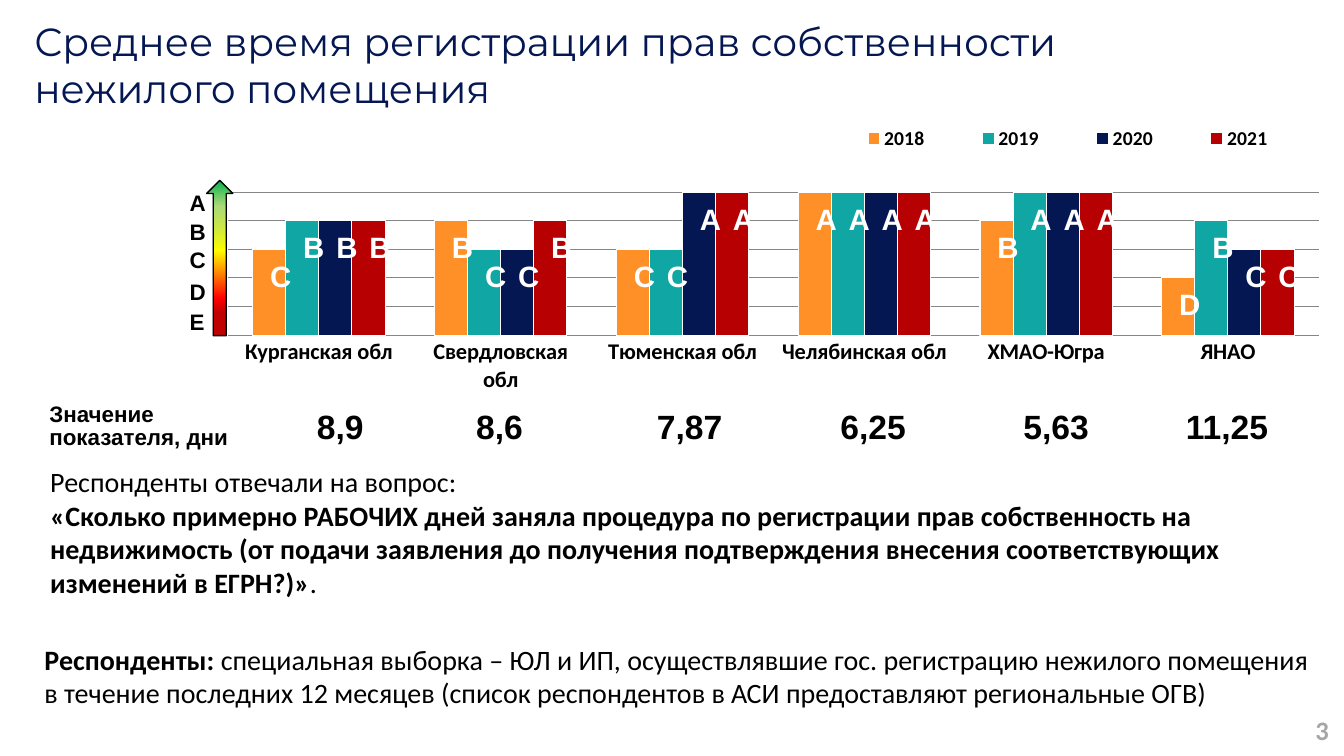
from dataclasses import dataclass

from lxml import etree
from pptx import Presentation
from pptx import util as u
from pptx.chart import data as chart_data
from pptx.dml.color import RGBColor
from pptx.enum import chart as charts, shapes, text
from pptx.oxml import parse_xml
from pptx.oxml.ns import qn

DRAWING_NS = "http://schemas.openxmlformats.org/drawingml/2006/main"


@dataclass(frozen=True)
class Theme:
    navy: str = "041752"
    black: str = "000000"
    white: str = "FFFFFF"
    muted: str = "A6A6A6"
    grid: str = "868686"
    series: tuple = ("FF9028", "10A6A4", "041752", "B70002")
    # position, colour, opacity (percent), from best grade to worst
    scale: tuple = ((0, "00B050", 100), (17, "92D050", 76), (45, "FFFF00", 100),
                    (76, "FF0000", 100), (85, "C00000", 100))
    heading_font: str = "Montserrat"
    body_font: str = "Calibri"
    label_font: str = "Arial"
    title: int = 28
    value: int = 24
    grade: int = 21
    body: int = 20
    page_number: int = 19
    label: int = 16
    legend: int = 14


THEME = Theme()
YEARS = ("2018", "2019", "2020", "2021")
GRADES = {  # one letter per year
    "Курганская обл": "СBBB",
    "Свердловская обл": "BCCB",
    "Тюменская обл": "CCAA",
    "Челябинская обл": "AAAA",
    "ХМАО-Югра": "BAAA",
    "ЯНАО": "DBCC",
}
SCORES = {"A": 100, "B": 80, "C": 60, "С": 60, "D": 40}
SCALE_TOPS = {"A": 1.81, "B": 2.09, "C": 2.37, "D": 2.69, "E": 2.99}
DAYS = ("8,9", "8,6", "7,87", "6,25", "5,63", "11,25")
COLUMNS = (2.43, 1.17, 1.99, 1.78, 1.86, 1.77, 1.62)

CHART_BOX = (0.88, 0.96, 12.45, 3.17)
PLOT = (0.111, 0.299, 0.869, 0.447)
LEGEND = (0.58, 0.08, 0.4, 0.1)
GAP = 150
REGION_STEP = CHART_BOX[2] * PLOT[2] / len(GRADES)
BAR_STEP = REGION_STEP / (len(YEARS) + GAP / 100)
GRID_STEP = CHART_BOX[3] * PLOT[3] / 5


def rgb(value):
    return RGBColor.from_string(value)


def set_layout(parent, index, box, inner=False):
    """Fix a chart part at fractions (left, top, width, height) of the chart."""
    for old in parent.findall(qn("c:layout")):
        parent.remove(old)
    layout = etree.Element(qn("c:layout"))
    manual = etree.SubElement(layout, qn("c:manualLayout"))
    settings = [("layoutTarget", "inner")] if inner else []
    settings += [("xMode", "edge"), ("yMode", "edge"), *zip("xywh", box)]
    for name, value in settings:
        etree.SubElement(manual, qn(f"c:{name}")).set("val", str(value))
    parent.insert(index, layout)


class SlideBuilder:
    def __init__(self, page, theme):
        self.page = page
        self.theme = theme

    def style(self, font, size, color, face, bold=False):
        font.name, font.size, font.bold = face, u.Pt(size), bold
        font.color.rgb = rgb(color)

    def add_span(self, para, words, size, color, face, bold=False):
        span = para.add_run()
        span.text = words
        self.style(span.font, size, color, face, bold)

    def text_box(self, box, paragraphs, size, color, face, align=None,
                 anchor=text.MSO_ANCHOR.TOP, side=0.13, edge=0.07):
        """Each paragraph is a list of (words, bold) spans."""
        frame = self.page.shapes.add_textbox(*map(u.Inches, box)).text_frame
        frame.word_wrap = True
        frame.vertical_anchor = anchor
        frame.margin_left = frame.margin_right = u.Inches(side)
        frame.margin_top = frame.margin_bottom = u.Inches(edge)
        for index, spans in enumerate(paragraphs):
            para = frame.add_paragraph() if index else frame.paragraphs[0]
            para.alignment = align
            for words, bold in spans:
                self.add_span(para, words, size, color, face, bold)
        return frame

    def letter(self, left, top, grade, size, color):
        self.text_box((left, top, 0.27, 0.49), [[(grade, True)]], size, color,
                      self.theme.label_font, text.PP_ALIGN.CENTER)

    def title(self, box, lines):
        theme = self.theme
        style = (theme.title, theme.navy, theme.heading_font)
        para = self.text_box(box, [[(lines[0], False)]], *style).paragraphs[0]
        for line in lines[1:]:
            para.add_line_break()
            self.add_span(para, line, *style)

    def scale_arrow(self, box):
        arrow = self.page.shapes.add_shape(shapes.MSO_SHAPE.UP_ARROW, *map(u.Inches, box))
        arrow.shadow.inherit = False
        arrow.line.color.rgb = rgb(self.theme.black)
        arrow.line.width = u.Pt(1)
        stops = "".join(
            f'<a:gs pos="{place * 1000}"><a:srgbClr val="{color}">'
            f'<a:alpha val="{opacity * 1000}"/></a:srgbClr></a:gs>'
            for place, color, opacity in self.theme.scale)
        gradient = parse_xml(
            f'<a:gradFill xmlns:a="{DRAWING_NS}" rotWithShape="1"><a:gsLst>{stops}</a:gsLst>'
            '<a:lin ang="5400000" scaled="0"/></a:gradFill>')
        arrow._element.spPr.find(qn("a:prstGeom")).addnext(gradient)

    def grade_chart(self):
        theme = self.theme
        data = chart_data.CategoryChartData()
        data.categories = list(GRADES)
        for index, year in enumerate(YEARS):
            data.add_series(year, [SCORES[grades[index]] for grades in GRADES.values()])
        chart = self.page.shapes.add_chart(
            charts.XL_CHART_TYPE.COLUMN_CLUSTERED, *map(u.Inches, CHART_BOX), data).chart
        self.style(chart.font, 18, theme.black, theme.body_font)
        chart.has_title = False

        plot = chart.plots[0]
        plot.gap_width, plot.overlap, plot.vary_by_categories = GAP, 0, False
        for series, color in zip(plot.series, theme.series):
            series.format.fill.solid()
            series.format.fill.fore_color.rgb = rgb(color)
            series.format.line.color.rgb = rgb(theme.white)
            series.format.line.width = u.Pt(0.75)

        regions, scores = chart.category_axis, chart.value_axis
        regions.major_tick_mark = charts.XL_TICK_MARK.NONE
        self.style(regions.tick_labels.font, theme.label, theme.black, theme.body_font, True)
        scores.visible = False
        scores.minimum_scale, scores.maximum_scale, scores.major_unit = 0, 100, 20
        scores.has_major_gridlines = True
        for line in (regions.format.line, scores.major_gridlines.format.line):
            line.color.rgb = rgb(theme.grid)
            line.width = u.Pt(0.75)

        chart.has_legend = True
        legend = chart.legend
        legend.position = charts.XL_LEGEND_POSITION.BOTTOM
        legend.include_in_layout = False
        self.style(legend.font, theme.legend, theme.black, theme.body_font, True)
        set_layout(legend._element, 1, LEGEND)
        set_layout(chart._chartSpace.chart.plotArea, 0, PLOT, inner=True)

    def value_table(self, box, values):
        theme = self.theme
        table = self.page.shapes.add_table(1, len(values), *map(u.Inches, box)).table
        table.first_row = table.horz_banding = False
        for index, (value, width) in enumerate(zip(values, COLUMNS)):
            table.columns[index].width = u.Inches(width)
            cell = table.cell(0, index)
            cell.fill.background()
            cell.margin_left = cell.margin_right = u.Inches(0.13)
            cell.margin_top = cell.margin_bottom = u.Inches(0.07)
            para = cell.text_frame.paragraphs[0]
            if index:
                cell.vertical_anchor = text.MSO_ANCHOR.MIDDLE
                para.alignment = text.PP_ALIGN.CENTER
            else:
                para.line_spacing = u.Pt(theme.label)
            self.add_span(para, value, theme.value if index else theme.label,
                          theme.black, theme.label_font, True)


def main():
    deck = Presentation()
    deck.slide_width, deck.slide_height = u.Inches(13.33), u.Inches(7.5)
    slide = SlideBuilder(deck.slides.add_slide(deck.slide_layouts[6]), THEME)
    body = (THEME.body, THEME.black, THEME.body_font)

    slide.text_box((12.7, 7.04, 0.61, 0.4), [[("3", True)]], THEME.page_number, THEME.muted,
                   THEME.body_font, text.PP_ALIGN.RIGHT, text.MSO_ANCHOR.MIDDLE)
    slide.grade_chart()
    slide.scale_arrow((2.05, 1.79, 0.26, 1.54))
    for grade, top in SCALE_TOPS.items():
        slide.letter(1.75, top, grade, THEME.label, THEME.black)
    for region, grades in enumerate(GRADES.values()):
        for year, grade in enumerate(grades):
            slide.letter(2.55 + region * REGION_STEP + year * BAR_STEP,
                         1.92 + (100 - SCORES[grade]) / 20 * GRID_STEP,
                         grade, THEME.grade, THEME.white)
    slide.title((0.21, 0.1, 13.12, 1.08),
                ("Среднее время регистрации прав собственности ", "нежилого помещения"))
    slide.value_table((0.36, 3.95, sum(COLUMNS), 0.58), ("Значение показателя, дни", *DAYS))
    slide.text_box((0.31, 6.3, 12.81, 0.81), [[
        ("Респонденты:", True),
        (" специальная выборка – ЮЛ и ИП, осуществлявшие гос. регистрацию нежилого помещения "
         "в течение последних 12 месяцев (список респондентов в АСИ предоставляют "
         "региональные ОГВ)", False)]], *body)
    slide.text_box((0.4, 4.56, 12.6, 1.78), [
        [("Респонденты отвечали на вопрос:", False)],
        [("«Сколько примерно РАБОЧИХ дней заняла процедура по регистрации прав собственность на "
          "недвижимость (от подачи заявления до получения подтверждения внесения "
          "соответствующих изменений в ЕГРН?)»", True), (".", False)]],
        *body, side=0.1, edge=0.05)
    deck.save("out.pptx")


if __name__ == "__main__":
    main()
